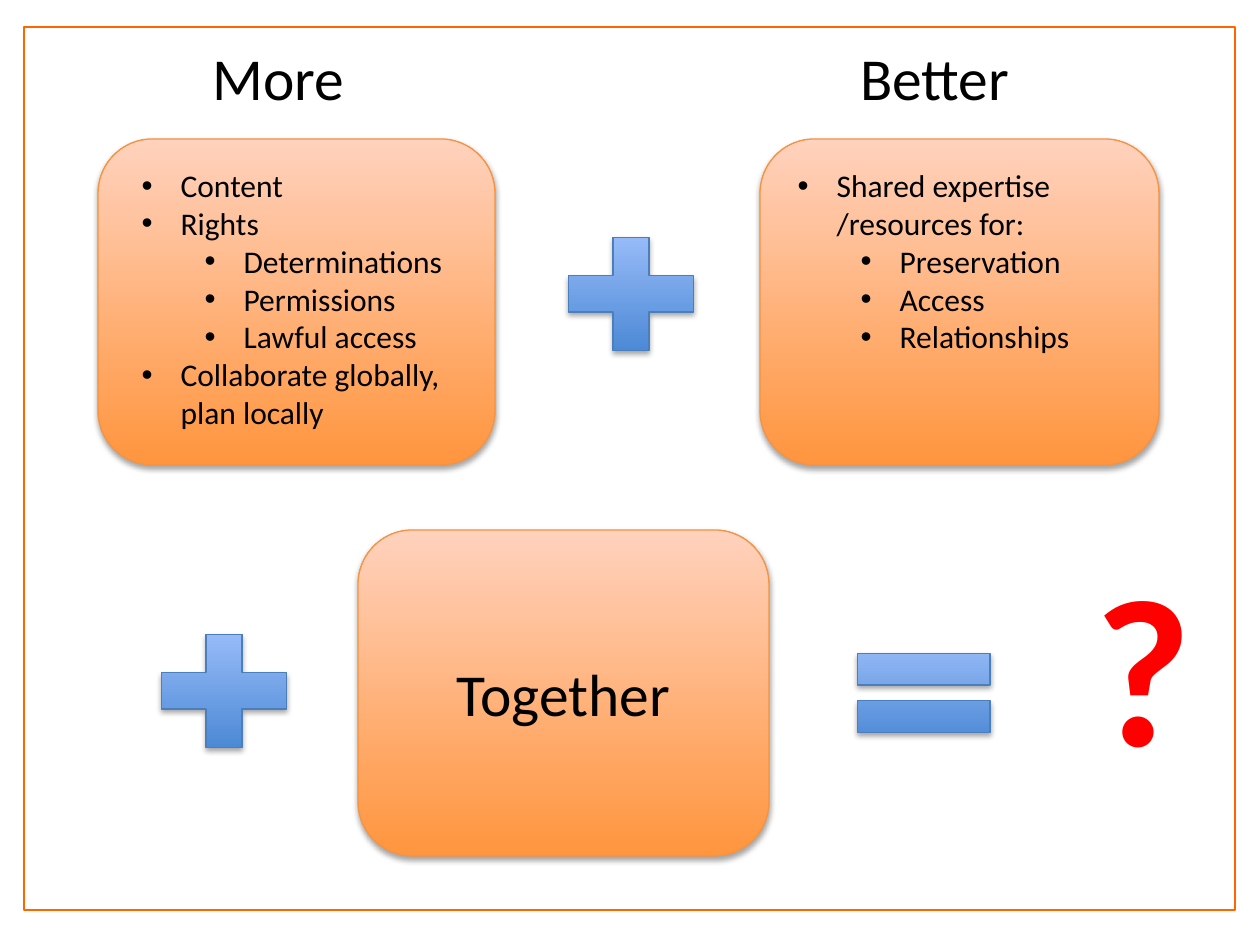
"""Build the More + Better + Together slide."""
from dataclasses import dataclass

from lxml import etree
from pptx import Presentation
from pptx import util as u
from pptx.dml.color import RGBColor
from pptx.enum import shapes, text
from pptx.oxml.ns import qn

PX = 914400 / 126
COMPARISON_LAYOUT = 4


@dataclass(frozen=True)
class Theme:
    """Colours, font and type sizes of the slide."""
    font: str = "Calibri"
    ink: str = "000000"
    paper: str = "FFFFFF"
    frame: str = "FF6600"
    question: str = "FF0000"
    card: tuple = ("FF953E", "FFD2BD", "F69240")
    operator: tuple = ("3F80CE", "A4C4FF", "4B7EBC")
    list_size: int = 18
    heading_size: int = 34
    question_size: int = 120


THEME = Theme()


def px(*lengths):
    """Turn pixel lengths into EMU."""
    return [u.Emu(round(length * PX)) for length in lengths]


def rgb(value):
    """Return a colour from its hex code."""
    return RGBColor.from_string(value)


def add_bullet(paragraph, level):
    """Give a paragraph a round bullet and the hanging indent of its level."""
    properties = paragraph._p.get_or_add_pPr()
    properties.set("marL", str(u.Inches(0.31 + 0.5 * level)))
    properties.set("indent", str(u.Inches(-0.31)))
    etree.SubElement(properties, qn("a:buFont"), typeface="Arial")
    etree.SubElement(properties, qn("a:buChar"), char="•")


def write(holder, lines, size, color=THEME.ink, bold=False, bullets=False,
          align=text.PP_ALIGN.LEFT, anchor=text.MSO_ANCHOR.TOP):
    """Fill a holder with (level, wording) lines in one format."""
    frame = holder.text_frame
    frame.word_wrap = True
    frame.auto_size = text.MSO_AUTO_SIZE.NONE
    frame.vertical_anchor = anchor
    for index, (level, wording) in enumerate(lines):
        paragraph = frame.add_paragraph() if index else frame.paragraphs[0]
        paragraph.level = level
        if bullets:
            add_bullet(paragraph, level)
        paragraph.alignment = align
        paragraph.space_before = u.Pt(0)
        run = paragraph.add_run()
        run.text = wording
        run.font.name, run.font.size, run.font.bold = THEME.font, u.Pt(size), bold
        run.font.color.rgb = rgb(color)


def add_frame(slide, box):
    """Draw the thin frame around the slide."""
    frame = slide.shapes.add_shape(shapes.MSO_SHAPE.RECTANGLE, *px(*box))
    frame.shadow.inherit = False
    frame.fill.solid()
    frame.fill.fore_color.rgb = rgb(THEME.paper)
    frame.line.color.rgb = rgb(THEME.frame)
    frame.line.width = u.Pt(1)


def add_glossy(slide, kind, box, colors):
    """Draw a preset shape with a vertical gradient and a soft shadow."""
    bottom, top, edge = colors
    glossy = slide.shapes.add_shape(kind, *px(*box))
    glossy.fill.gradient()
    glossy.fill.gradient_angle = 90
    for stop, color in zip(glossy.fill.gradient_stops, (bottom, top)):
        stop.color.rgb = rgb(color)
    glossy.line.color.rgb = rgb(edge)
    glossy.line.width = u.Pt(0.75)
    glossy.shadow.inherit = False
    effects = glossy.element.spPr.find(qn("a:effectLst"))
    shadow = etree.SubElement(effects, qn("a:outerShdw"), blurRad="40000",
                              dist="23000", dir="5400000", rotWithShape="0")
    shade = etree.SubElement(shadow, qn("a:srgbClr"), val="000000")
    etree.SubElement(shade, qn("a:alpha"), val="35000")
    return glossy


def place(slide, idx, box):
    """Move a layout placeholder to a box and bring it to the front."""
    holder = next(p for p in slide.placeholders if p.placeholder_format.idx == idx)
    holder.left, holder.top, holder.width, holder.height = px(*box)
    slide.shapes._spTree.append(holder.element)
    return holder


def add_topic(slide, idx, heading, points, card, left):
    """Draw a card with its heading above and its bulleted list inside."""
    add_glossy(slide, shapes.MSO_SHAPE.ROUNDED_RECTANGLE, card, THEME.card)
    write(place(slide, idx, (left, 35, 299, 84)), [(0, heading)],
          THEME.heading_size, align=text.PP_ALIGN.CENTER)
    write(place(slide, idx + 1, (left, 160, 336, 280)), points,
          THEME.list_size, bullets=True)


def main():
    """Build and save the slide."""
    deck = Presentation()
    deck.slide_width, deck.slide_height = u.Inches(10), u.Inches(7.5)
    slide = deck.slides.add_slide(deck.slide_layouts[COMPARISON_LAYOUT])
    title = slide.shapes.title.element
    title.getparent().remove(title)

    add_frame(slide, (24, 27, 1211, 883))
    add_topic(slide, 1, "More", [
        (0, "Content"), (0, "Rights"), (1, "Determinations"), (1, "Permissions"),
        (1, "Lawful access"), (0, "Collaborate globally, plan locally"),
    ], card=(98, 139, 397, 326), left=129)
    add_topic(slide, 3, "Better", [
        (0, "Shared expertise /resources for:"), (1, "Preservation"),
        (1, "Access"), (1, "Relationships"),
    ], card=(760, 139, 399, 326), left=785)

    together = add_glossy(slide, shapes.MSO_SHAPE.ROUNDED_RECTANGLE,
                          (358, 530, 411, 326), THEME.card)
    write(together, [(0, "Together")], THEME.heading_size,
          align=text.PP_ALIGN.CENTER, anchor=text.MSO_ANCHOR.MIDDLE)

    for kind, box in (
        (shapes.MSO_SHAPE.MATH_PLUS, (546, 217, 170, 154)),
        (shapes.MSO_SHAPE.MATH_PLUS, (139, 614, 170, 154)),
        (shapes.MSO_SHAPE.MATH_EQUAL, (834, 626, 180, 134)),
    ):
        add_glossy(slide, kind, box, THEME.operator)

    question = slide.shapes.add_textbox(*px(1082, 530, 115, 267))
    write(question, [(0, "?")], THEME.question_size, color=THEME.question, bold=True)
    deck.save("out.pptx")


if __name__ == "__main__":
    main()
